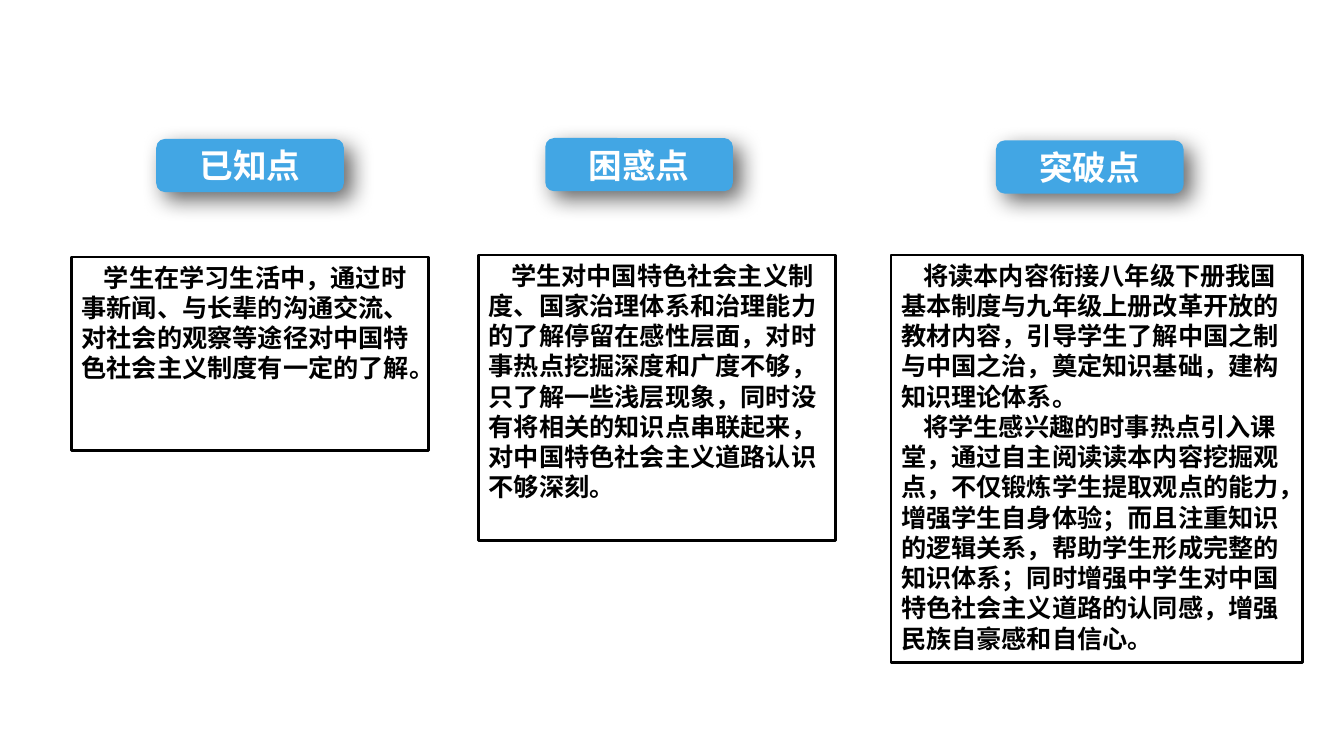
from lxml.etree import SubElement
from pptx import Presentation
from pptx.dml.color import RGBColor
from pptx.enum.shapes import MSO_SHAPE as Preset
from pptx.enum.text import MSO_ANCHOR as Anchor, PP_ALIGN as Align
from pptx.oxml.ns import qn
from pptx.util import Pt

FONT = "Noto Sans CJK SC"
BLUE, WHITE, BLACK = "42A6E4", "FFFFFF", "000000"
LABEL_SIZE = (134, 38)
LABEL_FONT = {"size": Pt(24), "bold": True, "name": FONT}
BODY_FONT = {"size": Pt(18), "bold": True, "name": FONT}

# label text, label left and top, note left, top, width and height, paragraphs
COLUMNS = [
    ("已知点", (111.6, 99.2), (51.1, 183.6, 255, 138.2), [
        "学生在学习生活中，通过时事新闻、与长辈的沟通交流、对社会的观察等途径对中国特色社会主义制度有一定的了解。",
    ]),
    ("困惑点", (389.5, 98.6), (342, 182.2, 255, 203.8), [
        "学生对中国特色社会主义制度、国家治理体系和治理能力的了解停留在感性层面，对时事热点挖掘深度和广度不够，"
        "只了解一些浅层现象，同时没有将相关的知识点串联起来，对中国特色社会主义道路认识不够深刻。",
    ]),
    ("突破点", (711.4, 100.3), (636.5, 182.2, 293.8, 290.9), [
        "将读本内容衔接八年级下册我国基本制度与九年级上册改革开放的教材内容，引导学生了解中国之制与中国之治，"
        "奠定知识基础，建构知识理论体系。",
        "将学生感兴趣的时事热点引入课堂，通过自主阅读读本内容挖掘观点，不仅锻炼学生提取观点的能力，"
        "增强学生自身体验；而且注重知识的逻辑关系，帮助学生形成完整的知识体系；"
        "同时增强中学生对中国特色社会主义道路的认同感，增强民族自豪感和自信心。",
    ]),
]


def rgb(value):
    return RGBColor.from_string(value)


def add_span(para, text, formats, color):
    span = para.add_run()
    span.text = text
    for name, value in formats.items():
        setattr(span.font, name, value)
    span.font.color.rgb = rgb(color)
    SubElement(span.font._element, qn("a:ea"), typeface=FONT)


def add_drop_shadow(shape):
    """Cast a soft black shadow towards the lower right."""
    shape.shadow.inherit = False
    effects = shape._element.spPr.find(qn("a:effectLst"))
    shadow = SubElement(effects, qn("a:outerShdw"), blurRad=str(Pt(16)),
                        dist=str(Pt(8)), dir="2700000", algn="tl", rotWithShape="0")
    color = SubElement(shadow, qn("a:srgbClr"), val=BLACK)
    SubElement(color, qn("a:alpha"), val="60000")


def add_label(page, text, place):
    label = page.shapes.add_shape(Preset.ROUNDED_RECTANGLE, *map(Pt, place + LABEL_SIZE))
    label.fill.solid()
    label.fill.fore_color.rgb = rgb(BLUE)
    label.line.fill.background()
    add_drop_shadow(label)
    label.text_frame.vertical_anchor = Anchor.MIDDLE
    para = label.text_frame.paragraphs[0]
    para.alignment = Align.CENTER
    add_span(para, text, LABEL_FONT, WHITE)


def add_note(page, texts, place):
    """Add a framed text box whose paragraphs have an indented first line."""
    box = page.shapes.add_textbox(*map(Pt, place))
    box.line.color.rgb = rgb(BLACK)
    box.line.width = Pt(2)
    frame = box.text_frame
    frame.word_wrap = True
    for index, text in enumerate(texts):
        para = frame.add_paragraph() if index else frame.paragraphs[0]
        para._p.get_or_add_pPr().set("indent", str(Pt(16)))
        add_span(para, text, BODY_FONT, BLACK)


def main():
    deck = Presentation()
    deck.slide_width, deck.slide_height = Pt(960), Pt(540)
    page = deck.slides.add_slide(deck.slide_layouts[6])
    for label, label_place, note_place, texts in COLUMNS:
        add_label(page, label, label_place)
        add_note(page, texts, note_place)
    deck.save("out.pptx")


if __name__ == "__main__":
    main()
